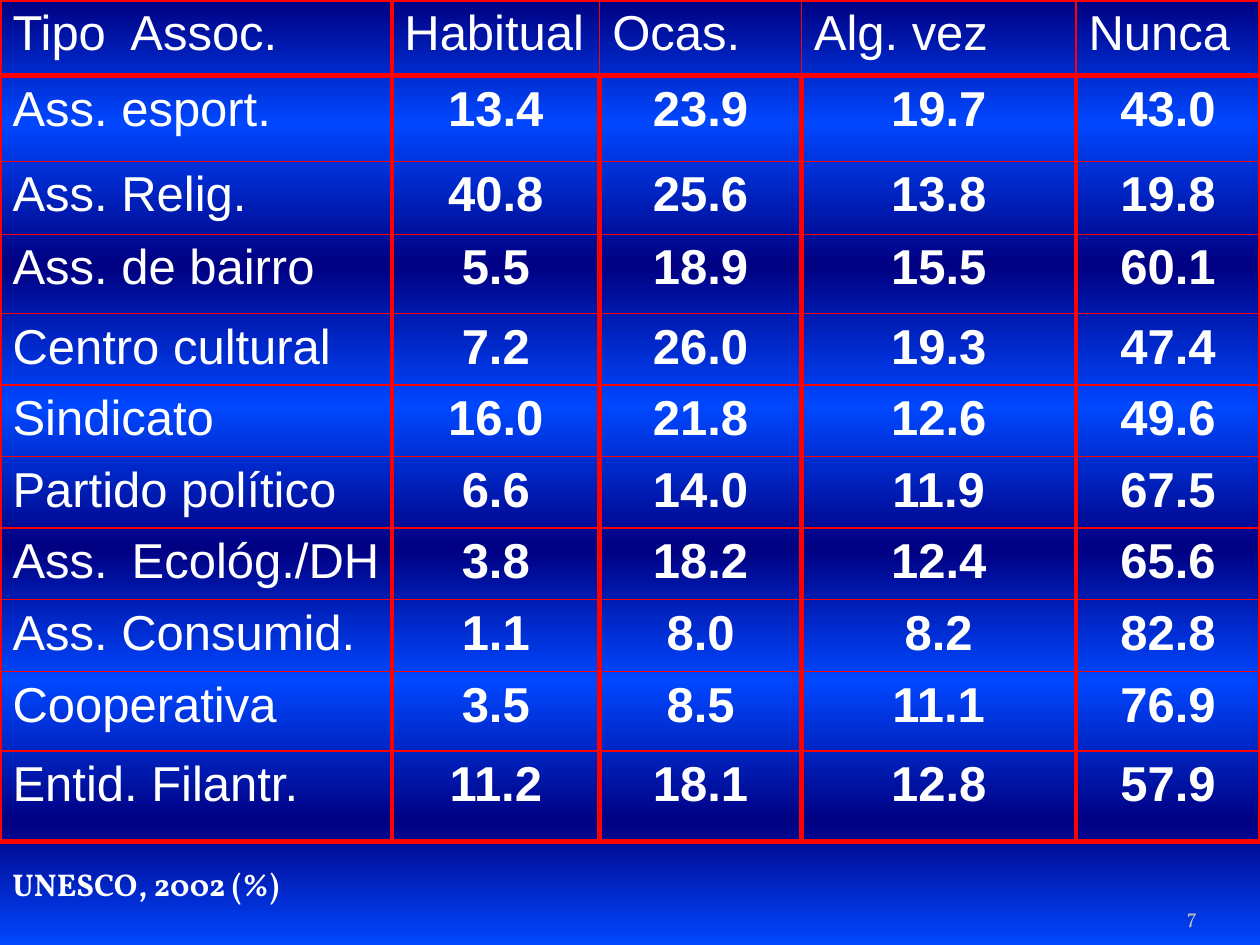
import pptx
import pptx.dml.color
import pptx.enum.text
import pptx.oxml
import pptx.oxml.ns
import pptx.util
from pptx.util import Inches

COLORS = {"navy": "000082", "blue": "0047FF", "red": "FF0000", "white": "FFFFFF", "gray": "BDBDBD"}
STOPS = [0, 13, 28, 43, 58, 72, 87, 100]
COLUMNS = [3.11, 1.65, 1.6, 2.18, 1.46]
HEIGHTS = [0.6, 0.68, 0.58, 0.63, 0.55, 0.54, 0.52, 0.51, 0.57, 0.63, 0.72]
ROWS = [
    ["Tipo  Assoc.", "Habitual", "Ocas.", "Alg. vez", "Nunca"],
    ["Ass. esport.", "13.4", "23.9", "19.7", "43.0"],
    ["Ass. Relig.", "40.8", "25.6", "13.8", "19.8"],
    ["Ass. de bairro ", "5.5", "18.9", "15.5", "60.1"],
    ["Centro cultural ", "7.2", "26.0", "19.3", "47.4"],
    ["Sindicato ", "16.0", "21.8", "12.6", "49.6"],
    ["Partido político", "6.6", "14.0", "11.9", "67.5"],
    ["Ass. Ecológ./DH ", "3.8", "18.2", "12.4", "65.6"],
    ["Ass. Consumid.", "1.1", "8.0", "8.2", "82.8"],
    ["Cooperativa ", "3.5", "8.5", "11.1", "76.9"],
    ["Entid. Filantr. ", "11.2", "18.1", "12.8", "57.9"],
]
ALIGN = pptx.enum.text.PP_ALIGN
ANCHOR = pptx.enum.text.MSO_ANCHOR


def write_text(frame, text, size=28, font="Arial", color="white", bold=False, align=ALIGN.LEFT):
    """Write one formatted paragraph into a text frame."""
    para = frame.paragraphs[0]
    para.alignment = align
    span = para.add_run()
    span.text = text
    span.font.size = pptx.util.Pt(size)
    span.font.name = font
    span.font.bold = bold
    span.font.color.rgb = pptx.dml.color.RGBColor.from_string(COLORS[color])


def paint_background(page):
    """Fill the page with alternating navy and blue bands."""
    page.background.fill.gradient()
    gradient = page.element.find(".//" + pptx.oxml.ns.qn("a:gradFill"))
    stops = gradient.find(pptx.oxml.ns.qn("a:gsLst"))
    for stop in list(stops):
        stops.remove(stop)
    for index, position in enumerate(STOPS):
        color = COLORS["blue" if index % 2 else "navy"]
        stops.append(pptx.oxml.parse_xml(
            f'<a:gs {pptx.oxml.ns.nsdecls("a")} pos="{position * 1000}">'
            f'<a:srgbClr val="{color}"/></a:gs>'))
    gradient.find(pptx.oxml.ns.qn("a:lin")).set("ang", "5400000")


def set_borders(cell, left, right, top, bottom):
    """Draw red cell borders of the given widths in points."""
    properties = cell._tc.get_or_add_tcPr()
    for index, (side, width) in enumerate(zip("LRTB", (left, right, top, bottom))):
        properties.insert(index, pptx.oxml.parse_xml(
            f'<a:ln{side} {pptx.oxml.ns.nsdecls("a")} w="{pptx.util.Pt(width)}">'
            f'<a:solidFill><a:srgbClr val="{COLORS["red"]}"/></a:solidFill></a:ln{side}>'))


def add_participation_table(page):
    """Add the table of association types and attendance."""
    last_row, last_column = len(ROWS) - 1, len(COLUMNS) - 1
    table = page.shapes.add_table(len(ROWS), len(COLUMNS), 0, 0,
                                  Inches(sum(COLUMNS)), Inches(sum(HEIGHTS))).table
    table.first_row = table.horz_banding = False
    for column, width in zip(table.columns, COLUMNS):
        column.width = Inches(width)
    for row, height in zip(table.rows, HEIGHTS):
        row.height = Inches(height)
    for i, values in enumerate(ROWS):
        for j, value in enumerate(values):
            cell = table.cell(i, j)
            number = i > 0 and j > 0
            write_text(cell.text_frame, value, bold=number,
                       align=ALIGN.CENTER if number else ALIGN.JUSTIFY)
            cell.fill.background()
            set_borders(cell,
                        left=3 if i > 0 or j < 2 else 1,
                        right=3 if i > 0 or j in (0, last_column) else 1,
                        top=3 if i < 2 else 1,
                        bottom=3 if i in (0, last_row) else 1)


def add_label(page, text, left, top, width, height, side=0.1, anchor=ANCHOR.TOP, **style):
    """Add a wrapped text box with one formatted paragraph."""
    box = page.shapes.add_textbox(Inches(left), Inches(top), Inches(width), Inches(height))
    frame = box.text_frame
    frame.word_wrap = True
    frame.vertical_anchor = anchor
    frame.margin_left = frame.margin_right = Inches(side)
    write_text(frame, text, font="Vollkorn", **style)


def main():
    """Build and save the slide."""
    deck = pptx.Presentation()
    deck.slide_width, deck.slide_height = Inches(10), Inches(7.5)
    page = deck.slides.add_slide(deck.slide_layouts[6])
    paint_background(page)
    add_label(page, "7", 8.67, 7.02, 0.83, 0.4, side=0, anchor=ANCHOR.BOTTOM,
              size=12, color="gray", align=ALIGN.RIGHT)
    add_participation_table(page)
    add_label(page, "UNESCO, 2002 (%)", 0, 6.82, 6.5, 0.4, size=18, bold=True)
    deck.save("out.pptx")


if __name__ == "__main__":
    main()
